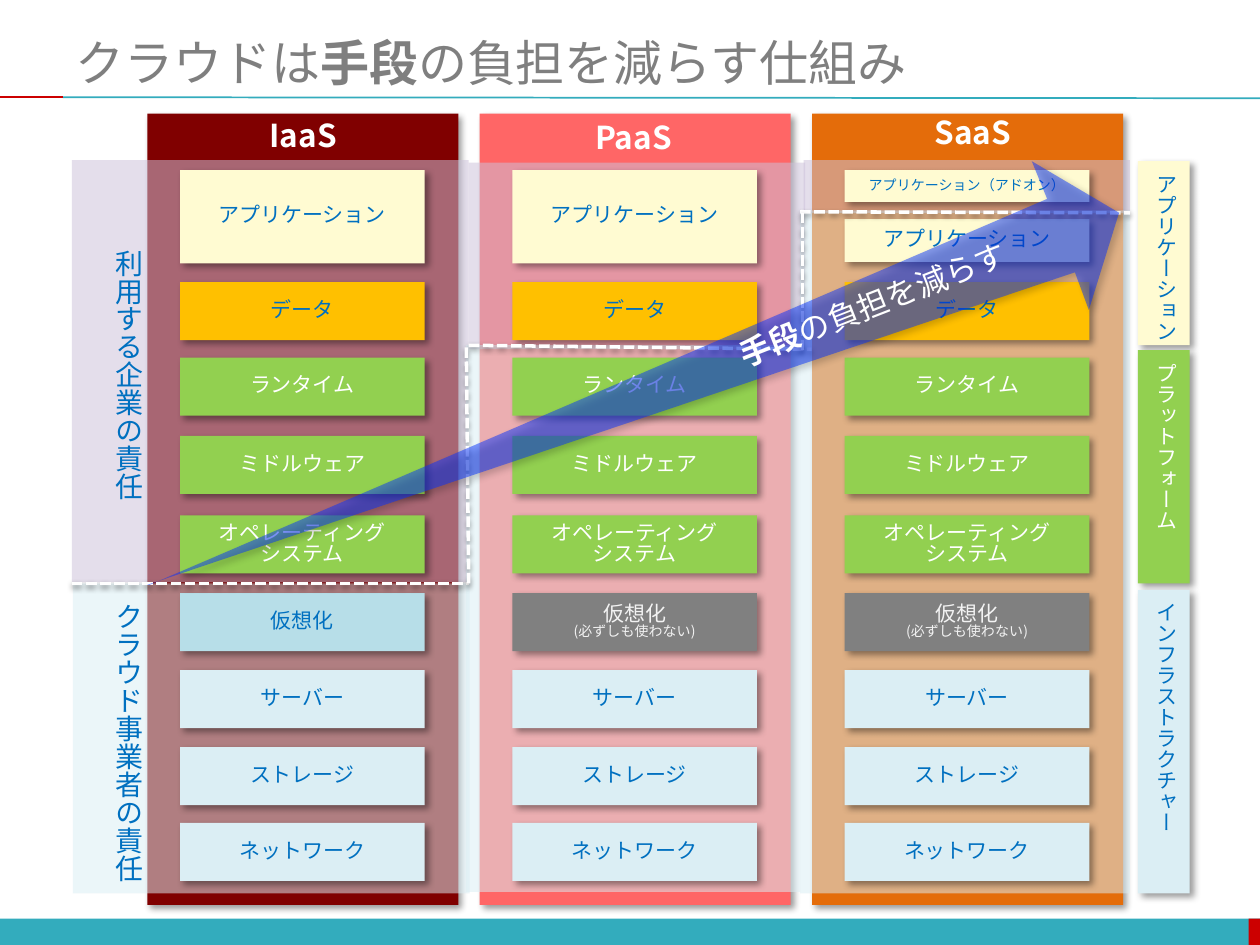
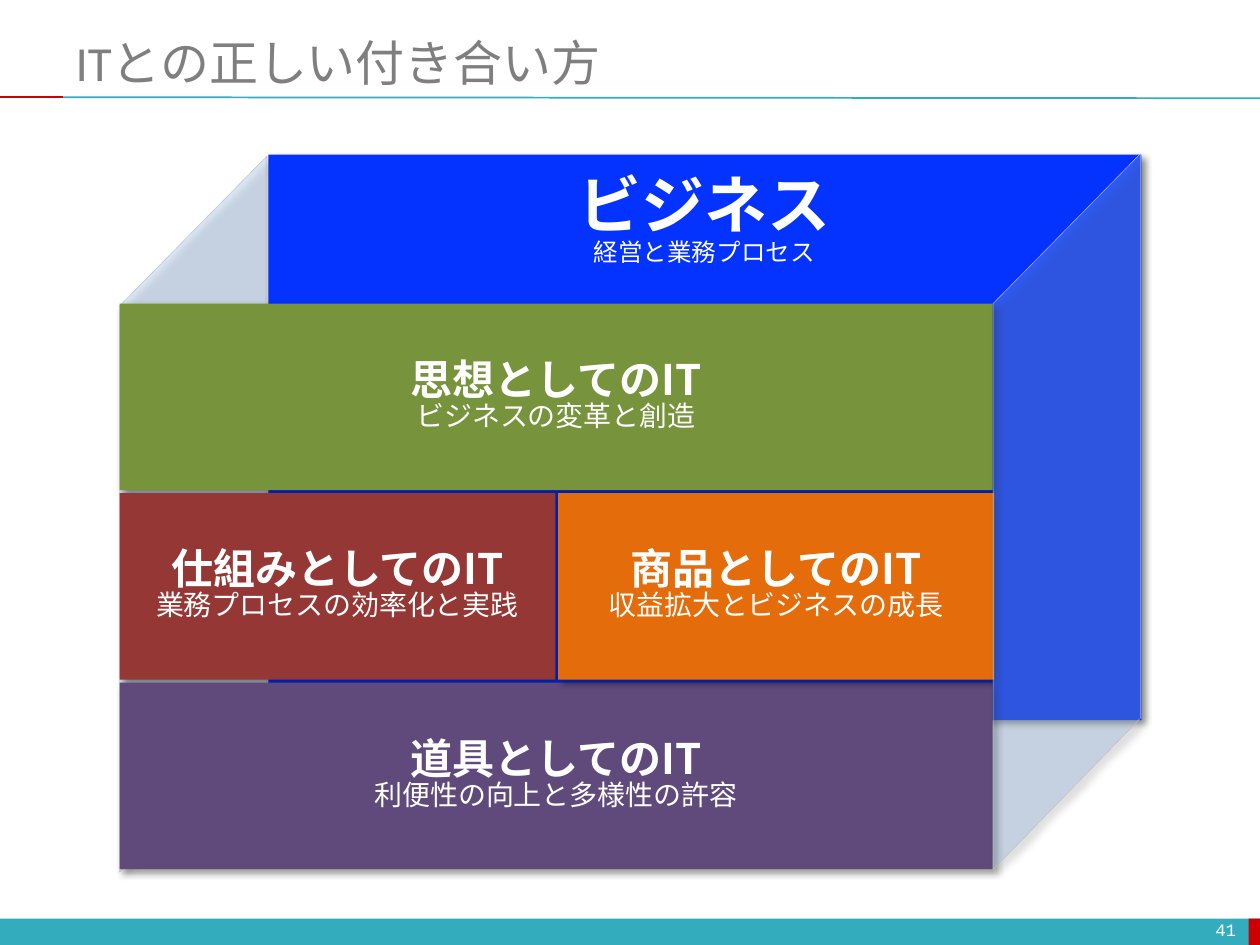
from typing import NamedTuple, Optional

from lxml import etree
from pptx import Presentation
from pptx import util as u
from pptx.dml.color import RGBColor
from pptx.enum import dml, shapes, text
from pptx.oxml.ns import qn

CJK = "Noto Sans CJK JP"
TEAL, RED, GREY, WHITE = "33ACBD", "CC0000", "7F7F7F", "FFFFFF"
BLUE, INK, ORANGE = "0432FF", "0070C0", "E46C0A"
CREAM, GOLD, GREEN, PALE = "FFFBD2", "FFC000", "92D050", "DBEEF4"
LILAC = "CCC1DA"
RECT = shapes.MSO_SHAPE.RECTANGLE
ROUND = shapes.MSO_SHAPE.ROUNDED_RECTANGLE
MID, LEFT, RIGHT = text.PP_ALIGN.CENTER, text.PP_ALIGN.LEFT, text.PP_ALIGN.RIGHT


class Box(NamedTuple):
    x: float
    y: float
    w: float
    h: float


class Line(NamedTuple):
    text: str
    size: float = 12
    bold: bool = False


class Shade(NamedTuple):
    alpha: int
    blur: float
    dist: float
    angle: int


class Tile(NamedTuple):
    y: float
    h: float
    fill: str
    ink: str
    lines: list[Line]


class Stack(NamedTuple):
    name: str
    fill: str
    head: Box
    tiles: list[Tile]


class Block(NamedTuple):
    box: Box
    fill: str
    head: str
    sub: str


DROP = Shade(40, 4, 3, 45)
SOFT = Shade(38, 3.1, 1.6, 90)


def tint(code: str) -> RGBColor:
    return RGBColor.from_string(code)


def place(box: Box) -> list[u.Cm]:
    return [u.Cm(v) for v in box]


def cast(item, shade: Optional[Shade]) -> None:
    props = item.element.spPr
    fx = props.find(qn("a:effectLst"))
    if fx is None:
        fx = etree.SubElement(props, qn("a:effectLst"))
    if shade:
        drop = etree.SubElement(
            fx, qn("a:outerShdw"), blurRad=str(u.Pt(shade.blur)), dist=str(u.Pt(shade.dist)),
            dir=str(shade.angle * 60000), algn="ctr", rotWithShape="0")
        color = etree.SubElement(drop, qn("a:srgbClr"), val="000000")
        etree.SubElement(color, qn("a:alpha"), val=str(shade.alpha * 1000))


def paint(item, fill: str, alpha: int = 100, shade: Optional[Shade] = None) -> None:
    item.fill.solid()
    item.fill.fore_color.rgb = tint(fill)
    if alpha < 100:
        color = item.element.spPr.find(qn("a:solidFill"))[0]
        etree.SubElement(color, qn("a:alpha"), val=str(alpha * 1000))
    item.line.fill.background()
    item.shadow.inherit = False
    cast(item, shade)


def write(item, lines: list[Line], ink: str, face: str = CJK, align=MID,
          wrap: bool = True, upright: bool = False) -> None:
    frame = item.text_frame
    frame.word_wrap = wrap
    if upright:
        item.element.txBody.bodyPr.set("vert", "eaVert")
    for n, line in enumerate(lines):
        para = frame.add_paragraph() if n else frame.paragraphs[0]
        para.alignment = align
        para.line_spacing = 0.83
        font = para.font
        font.size, font.name = u.Pt(line.size), face
        font.color.rgb = tint(ink)
        font.bold = line.bold
        etree.SubElement(font._rPr, qn("a:ea"), typeface=CJK)
        for k, part in enumerate(line.text.split("*")):
            if part:
                run = para.add_run()
                run.text = part
                if k % 2:
                    run.font.bold = True


def block(slide, box: Box, fill: str, alpha: int = 100, shade: Optional[Shade] = None,
          kind=RECT):
    item = slide.shapes.add_shape(kind, *place(box))
    if kind == ROUND:
        item.adjustments[0] = 0
    paint(item, fill, alpha, shade)
    item.text_frame.vertical_anchor = text.MSO_ANCHOR.MIDDLE
    return item


def label(slide, box: Box, lines: list[Line], ink: str, upright: bool = False):
    item = slide.shapes.add_textbox(*place(box))
    write(item, lines, ink, wrap=False, upright=upright)
    item.text_frame.auto_size = text.MSO_AUTO_SIZE.SHAPE_TO_FIT_TEXT
    return item


def rule(slide, ends: tuple, color: str, width: float, dash=None,
         shade: Optional[Shade] = None) -> None:
    item = slide.shapes.add_connector(
        shapes.MSO_CONNECTOR.STRAIGHT, *[u.Cm(v) for v in ends])
    item.line.color.rgb = tint(color)
    item.line.width = u.Pt(width)
    if dash:
        item.line.dash_style = dash
    cast(item, shade)


def trace(slide, points: list, fill: str, alpha: int):
    spots = [(u.Cm(x), u.Cm(y)) for x, y in points]
    pen = slide.shapes.build_freeform(*spots[0])
    pen.add_line_segments(spots[1:], close=True)
    item = pen.convert_to_shape()
    paint(item, fill, alpha, DROP)
    return item


def start(deck, title: str):
    slide = deck.slides.add_slide(deck.slide_layouts[5])
    block(slide, Box(0, 18.52, 25.4, 0.53), TEAL)
    block(slide, Box(25.17, 18.52, 0.23, 0.53), RED)
    rule(slide, (1.27, 1.96, 25.4, 1.98), TEAL, 1)
    rule(slide, (0, 1.96, 1.27, 1.96), RED, 1)
    head = slide.shapes.title
    head.left, head.top, head.width, head.height = place(Box(1.27, 0.76, 24.13, 1.17))
    write(head, [Line(title, 28)], GREY, "Calibri", LEFT)
    head.text_frame.vertical_anchor = text.MSO_ANCHOR.MIDDLE
    head.text_frame.auto_size = text.MSO_AUTO_SIZE.NONE
    return slide


def tile(y: float, fill: str, ink: str, *names: str, h: float = 1.17) -> Tile:
    return Tile(y, h, fill, ink, [Line(n) for n in names])


APP = "アプリケーション"
DATA = tile(5.69, GOLD, INK, "データ")
PLAT = [
    tile(7.21, GREEN, WHITE, "ランタイム"),
    tile(8.79, GREEN, WHITE, "ミドルウェア"),
    tile(10.39, GREEN, WHITE, "オペレーティング", "システム"),
]
VIRT = tile(11.96, "B7DEE8", INK, "仮想化")
SPARE = Tile(11.96, 1.17, "808080", "F2F2F2", [Line("仮想化"), Line("(必ずしも使わない)", 8)])
INFRA = [
    tile(13.51, PALE, INK, "サーバー"),
    tile(15.06, PALE, INK, "ストレージ"),
    tile(16.59, PALE, INK, "ネットワーク"),
]
FULL = tile(3.43, CREAM, INK, APP, h=1.88)
ADDON = Tile(3.43, 0.64, CREAM, INK, [Line("アプリケーション（アドオン）", 8)])
SMALL = tile(4.42, CREAM, INK, APP, h=0.86)

STACKS = [
    Stack("IaaS", "800000", Box(5.08, 2.34, 2.06, 1.02), [FULL, DATA, *PLAT, VIRT, *INFRA]),
    Stack("PaaS", "FF6666", Box(11.68, 2.39, 2.18, 1.02), [FULL, DATA, *PLAT, SPARE, *INFRA]),
    Stack("SaaS", ORANGE, Box(18.52, 2.29, 2.18, 1.02),
          [ADDON, SMALL, DATA, *PLAT, SPARE, *INFRA]),
]
ZONES = [
    (LILAC, Box(1.45, 3.23, 8, 8.51)),
    (LILAC, Box(9.45, 3.28, 6.78, 3.76)),
    (LILAC, Box(16.2, 3.23, 6.58, 1.07)),
    (PALE, Box(1.47, 11.76, 8, 6.25)),
    (PALE, Box(9.4, 6.96, 6.73, 11.02)),
    (PALE, Box(16.13, 4.24, 6.65, 13.77)),
]
STEPS = [
    (1.45, 11.76, 9.45, 11.76),
    (9.45, 6.96, 16.36, 7.04),
    (16.13, 4.27, 22.78, 4.29),
    (9.45, 11.76, 9.4, 6.96),
    (16.18, 7.06, 16.18, 4.22),
]
LAYERS = [
    tile(3.25, CREAM, INK, APP, h=3.71),
    tile(7.06, GREEN, WHITE, "プラットフォーム", h=4.7),
    tile(11.89, PALE, INK, "インフラストラクチャー", h=6.12),
]
DUTIES = [
    ("利用する企業の責任", Box(1.75, 4.78, 1.19, 5.38)),
    ("クラウド事業者の責任", Box(1.75, 11.91, 1.19, 5.94)),
]
ARROW = [(3.02, 11.79), (21.11, 4.01), (20.8, 3.25), (22.56, 4.29),
         (21.95, 6.25), (21.67, 5.49), (2.97, 11.79)]


def cloud(deck) -> None:
    slide = start(deck, "クラウドは*手段*の負担を減らす仕組み")
    lefts = [2.97 + 6.7 * n for n in range(len(STACKS))]
    for x, stack in zip(lefts, STACKS):
        block(slide, Box(x, 2.29, 6.27, 15.95), stack.fill, shade=DROP, kind=ROUND)
    for fill, box in ZONES:
        block(slide, box, fill, 53)
    for x, stack in zip(lefts, STACKS):
        for part in stack.tiles:
            item = block(slide, Box(x + 0.66, part.y, 4.93, part.h), part.fill, shade=DROP)
            write(item, part.lines, part.ink)
    for ends in STEPS:
        rule(slide, ends, WHITE, 2, dml.MSO_LINE.SQUARE_DOT, SOFT)
    for stack in STACKS:
        label(slide, stack.head, [Line(stack.name, 18, True)], WHITE)
    for part in LAYERS:
        item = block(slide, Box(22.94, part.y, 1.04, part.h), part.fill, shade=DROP, kind=ROUND)
        write(item, part.lines, part.ink, wrap=False, upright=True)
    for name, box in DUTIES:
        label(slide, box, [Line(name, 16)], INK, upright=True)
    trace(slide, ARROW, BLUE, 49)
    note = label(slide, Box(14.5, 5.74, 6.27, 1.02), [Line("*手段*の負担を減らす", 18)], WHITE)
    note.rotation = 338.5


ROWS = [6.12 + 3.82 * n for n in range(3)]
WIDE, HALF, TALL = 17.6, 8.79, 3.76
ROLES = [
    Block(Box(2.41, ROWS[0], WIDE, TALL), "77933C", "思想としてのIT", "ビジネスの変革と創造"),
    Block(Box(2.41, ROWS[1], HALF, TALL), "953735", "仕組みとしてのIT",
          "業務プロセスの効率化と実践"),
    Block(Box(2.41, ROWS[2], WIDE, TALL), "604A7B", "道具としてのIT",
          "利便性の向上と多様性の許容"),
    Block(Box(11.25, ROWS[1], HALF, TALL), ORANGE, "商品としてのIT",
          "収益拡大とビジネスの成長"),
]


def side(slide, x: float, y: float) -> None:
    face = [(x, y), (x + 2.97, y - 3.02), (x + 2.97, y + 8.36), (x, y + 11.41)]
    item = trace(slide, face, "8EB4E3", 31)
    item.line.color.rgb = tint("BFBFBF")
    item.line.width = u.Pt(0.25)


def cube(deck) -> None:
    slide = start(deck, "ITとの正しい付き合い方")
    side(slide, 2.41, 6.17)
    page = slide.shapes.add_textbox(*place(Box(19.25, 18.47, 5.92, 0.61)))
    write(page, [Line("41", 10)], WHITE, "Courier New", RIGHT)
    page.text_frame.vertical_anchor = text.MSO_ANCHOR.MIDDLE
    block(slide, Box(5.41, 3.12, WIDE, 11.4), BLUE, shade=DROP)
    for role in ROLES:
        item = block(slide, role.box, role.fill, shade=DROP)
        write(item, [Line(role.head, 24, True), Line(role.sub, 16)], WHITE)
    label(slide, Box(11.38, 3.48, 5.64, 2.39),
          [Line("ビジネス", 36, True), Line("経営と業務プロセス", 14)], WHITE)
    side(slide, 20.02, 6.12)


def main() -> None:
    deck = Presentation()
    deck.slide_width, deck.slide_height = u.Cm(25.4), u.Cm(19.05)
    cloud(deck)
    cube(deck)
    deck.save("out.pptx")


if __name__ == "__main__":
    main()
